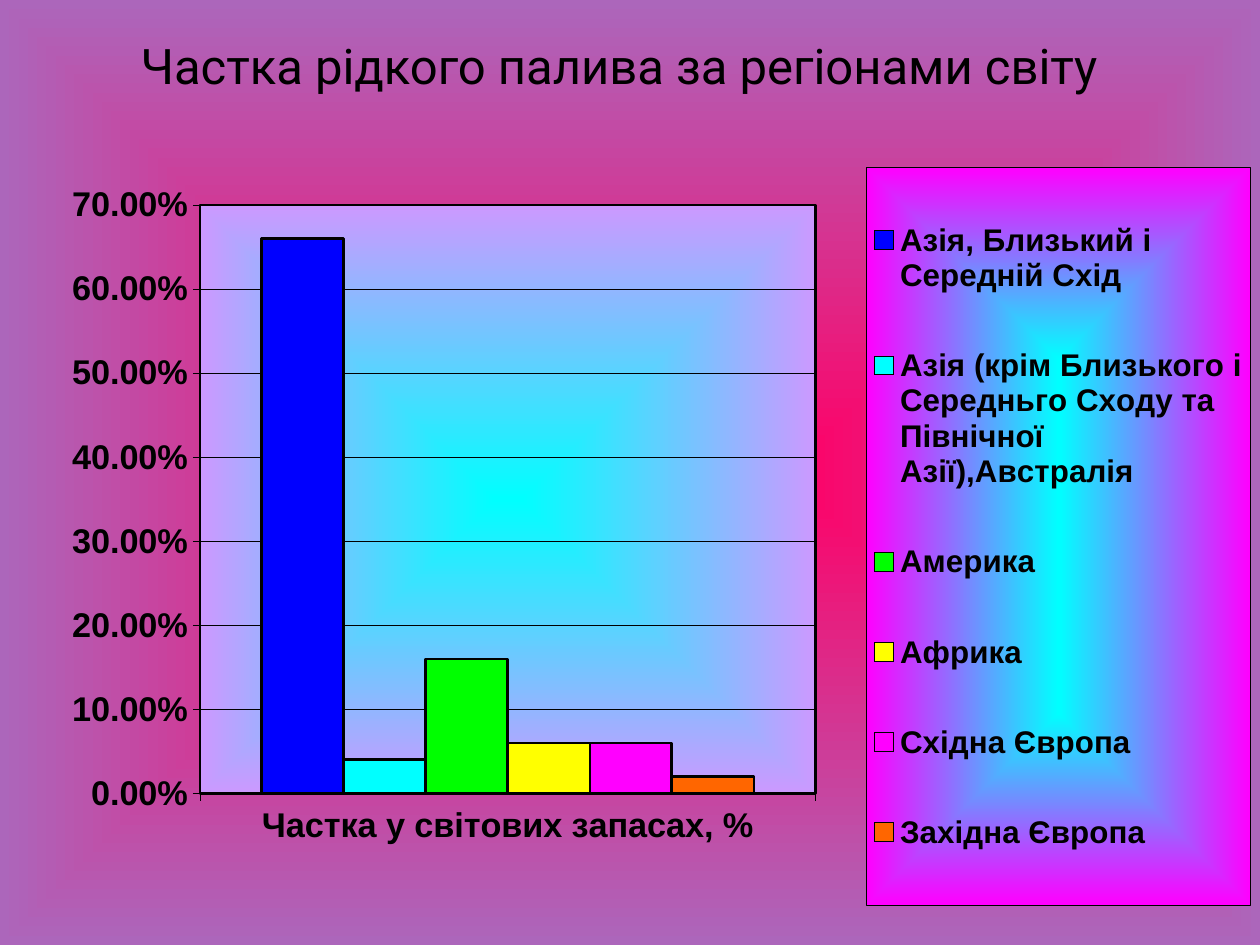
"""Builds a slide with a column chart of liquid fuel reserves by world region."""
from lxml.etree import SubElement
from pptx import Presentation
from pptx.chart.data import CategoryChartData
from pptx.dml.color import RGBColor
from pptx.enum.chart import XL_CHART_TYPE, XL_LEGEND_POSITION, XL_TICK_LABEL_POSITION, XL_TICK_MARK
from pptx.enum.text import MSO_ANCHOR, PP_ALIGN
from pptx.oxml import parse_xml
from pptx.oxml.ns import nsdecls, qn
from pptx.util import Cm, Pt


def centred_gradient(shape, inner, outer):
    return (
        f'<a:gradFill {nsdecls("a")} rotWithShape="1"><a:gsLst>'
        f'<a:gs pos="0"><a:srgbClr val="{inner}"/></a:gs>'
        f'<a:gs pos="100000"><a:srgbClr val="{outer}"/></a:gs></a:gsLst>'
        f'<a:path path="{shape}"><a:fillToRect l="50000" t="50000" r="50000" b="50000"/></a:path>'
        '</a:gradFill>'
    )


def set_colour(colour_format, value):
    colour_format.rgb = RGBColor.from_string(value)


presentation = Presentation()
presentation.slide_width, presentation.slide_height = Cm(25.4), Cm(19.05)
slide = presentation.slides.add_slide(presentation.slide_layouts[5])

slide.background.fill.solid()
background = slide.element.find(".//" + qn("p:bgPr"))
background.replace(background[0], parse_xml(centred_gradient("shape", "FF0066", "AC66BB")))

heading = slide.shapes.title
heading.left, heading.top, heading.width, heading.height = Cm(2.58), Cm(0.58), Cm(21.54), Cm(1.8)
heading.text_frame.text = "Частка рідкого палива за регіонами світу"
heading.text_frame.vertical_anchor = MSO_ANCHOR.TOP
heading_line = heading.text_frame.paragraphs[0]
heading_line.alignment = PP_ALIGN.LEFT
heading_font = heading_line.runs[0].font
heading_font.name, heading_font.size = "Roboto", Pt(28)
set_colour(heading_font.color, "000000")

regions = [
    ("Азія, Близький і Середній Схід", 0.66, "0000FF"),
    ("Азія (крім Близького і Середньго Сходу та Північної Азії),Австралія", 0.04, "00FFFF"),
    ("Америка", 0.16, "00FF00"),
    ("Африка", 0.06, "FFFF00"),
    ("Східна Європа", 0.06, "FF00FF"),
    ("Західна Європа", 0.02, "FF6600"),
]
reserves = CategoryChartData(number_format="0.00%")
reserves.categories = ["Частка у світових запасах, %"]
for region, share, _ in regions:
    reserves.add_series(region, [share])

chart = slide.shapes.add_chart(
    XL_CHART_TYPE.COLUMN_CLUSTERED, Cm(0.79), Cm(3.37), Cm(24.61), Cm(14.88), reserves
).chart
chart.has_title = False
chart.has_legend = True
legend = chart.legend
legend.position = XL_LEGEND_POSITION.RIGHT
legend.include_in_layout = False

columns = chart.plots[0]
columns.vary_by_categories = False
columns.gap_width, columns.overlap = 150, 0
for series, (_, _, colour) in zip(columns.series, regions):
    series.format.fill.solid()
    set_colour(series.format.fill.fore_color, colour)
    series.format.line.width = Pt(1.63)
    set_colour(series.format.line.color, "000000")

shares = chart.value_axis
shares.minimum_scale, shares.maximum_scale, shares.major_unit = 0, 0.7, 0.1
shares.has_major_gridlines = True
shares.tick_labels.number_format = "0.00%"
shares.tick_labels.number_format_is_linked = False
chart.category_axis.tick_label_position = XL_TICK_LABEL_POSITION.LOW
for axis in (chart.category_axis, shares):
    axis.major_tick_mark = XL_TICK_MARK.OUTSIDE
    axis.minor_tick_mark = XL_TICK_MARK.NONE
for line in (chart.category_axis.format.line, shares.format.line, shares.major_gridlines.format.line):
    line.width = Pt(0.41)
    set_colour(line.color, "000000")

for font, size in (
    (chart.font, 19.6),
    (chart.category_axis.tick_labels.font, 19.6),
    (shares.tick_labels.font, 19.6),
    (legend.font, 17.9),
):
    font.name, font.size, font.bold = "Arial", Pt(size), True
    set_colour(font.color, "000000")

plot_area = chart.element.find(".//" + qn("c:plotArea"))
legend_area = chart.element.find(".//" + qn("c:legend"))
for area, layout_index, bounds, gradient, border in (
    (plot_area, 0, (0.132, 0.051, 0.504, 0.798), ("rect", "00FFFF", "CC99FF"), 1.2),
    (legend_area, 1, (0.678, 0, 0.314, 1), ("rect", "00FFFF", "FF00FF"), 0.41),
):
    for old_layout in area.findall(qn("c:layout")):
        area.remove(old_layout)
    layout = parse_xml(f'<c:layout {nsdecls("c")}><c:manualLayout/></c:layout>')
    settings = [("xMode", "edge"), ("yMode", "edge"), *zip("xywh", bounds)]
    if area is plot_area:
        settings.insert(0, ("layoutTarget", "inner"))
    for tag, value in settings:
        SubElement(layout[0], qn("c:" + tag)).set("val", str(value))
    area.insert(layout_index, layout)
    frame = parse_xml(
        f'<c:spPr {nsdecls("c", "a")}>{centred_gradient(*gradient)}<a:ln w="{Pt(border)}">'
        '<a:solidFill><a:srgbClr val="000000"/></a:solidFill></a:ln></c:spPr>'
    )
    text_properties = area.find(qn("c:txPr"))
    if text_properties is None:
        area.append(frame)
    else:
        text_properties.addprevious(frame)

presentation.save("out.pptx")
